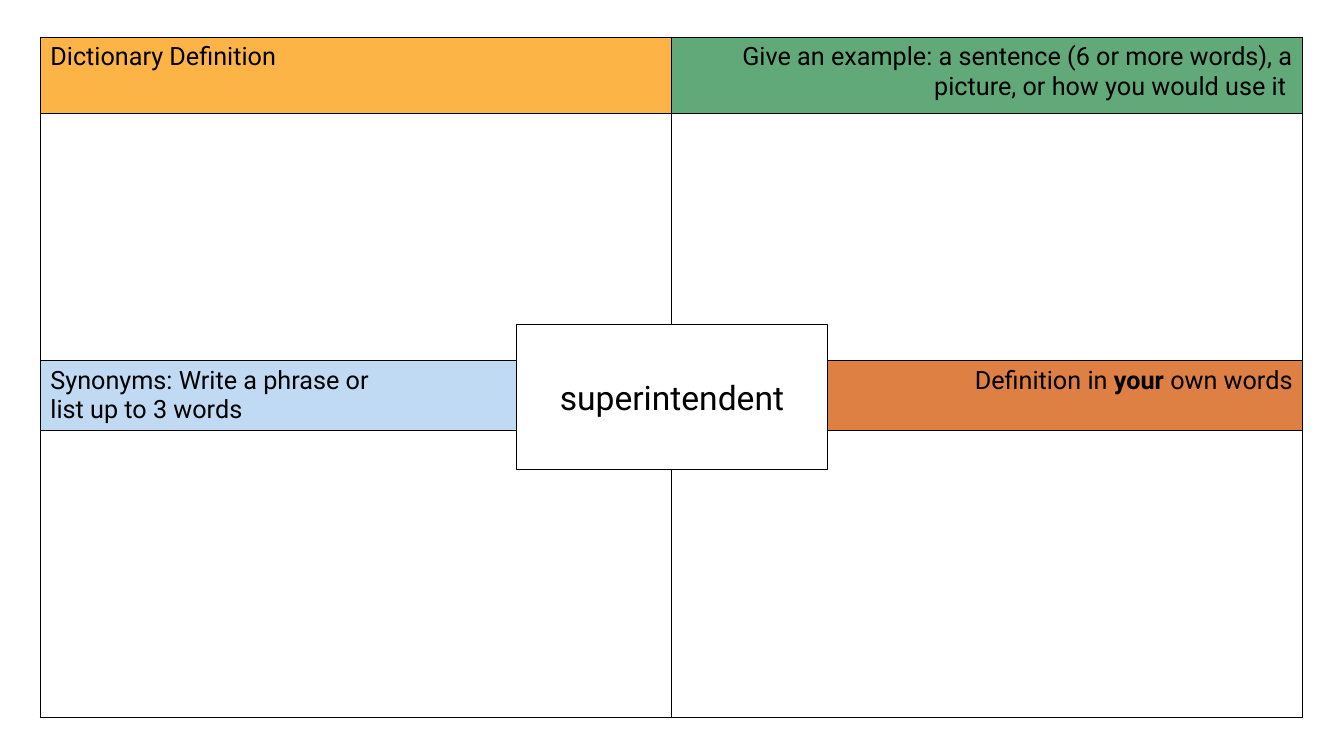
from dataclasses import dataclass

import pptx
import pptx.dml.color
import pptx.enum.text
import pptx.oxml
import pptx.oxml.ns
import pptx.table
import pptx.text.text
import pptx.util
from pptx.dml.color import RGBColor
from pptx.enum.text import MSO_ANCHOR, MSO_AUTO_SIZE, PP_ALIGN
from pptx.util import Inches, Pt

BLACK = RGBColor(0x00, 0x00, 0x00)
WHITE = RGBColor(0xFF, 0xFF, 0xFF)
AMBER = RGBColor(0xFC, 0xB4, 0x47)
GREEN = RGBColor(0x62, 0xA9, 0x7A)
SKY = RGBColor(0xBF, 0xDA, 0xF2)
ORANGE = RGBColor(0xDE, 0x80, 0x43)
FONT = "Roboto"
COLUMN_WIDTH = 6.26
ROW_HEIGHTS = (0.76, 2.45, 0.69, 2.85)


@dataclass
class Heading:
    row: int
    col: int
    fill: RGBColor
    lines: list[list[str]]  # paragraphs of runs; every second run is bold


HEADINGS = [
    Heading(0, 0, AMBER, [["Dictionary Definition"]]),
    Heading(0, 1, GREEN, [["Give an example: a sentence (6 or more words), a "
                           "picture, or how you would use it "]]),
    Heading(2, 0, SKY, [["Synonyms: Write a phrase or "],
                        ["list up to 3 words "]]),
    Heading(2, 1, ORANGE, [["Definition in ", "your ", "own words"]]),
]


def set_font(p: pptx.text.text._Paragraph, size: int) -> None:
    p.font.name = FONT
    p.font.size = Pt(size)
    p.font.color.rgb = BLACK


def format_cell(cell: pptx.table._Cell) -> None:
    """Give a cell a white fill and thin black borders."""
    tc_pr = cell._tc.get_or_add_tcPr()
    for side in ("lnL", "lnR", "lnT", "lnB"):
        tc_pr.append(pptx.oxml.parse_xml(
            f'<a:{side} {pptx.oxml.ns.nsdecls("a")} w="{Pt(1)}">'
            f'<a:solidFill><a:srgbClr val="{BLACK}"/></a:solidFill></a:{side}>'))
    cell.fill.solid()
    cell.fill.fore_color.rgb = WHITE


def write_heading(cell: pptx.table._Cell, heading: Heading) -> None:
    cell.fill.fore_color.rgb = heading.fill
    tf = cell.text_frame
    for i, runs in enumerate(heading.lines):
        p = tf.add_paragraph() if i else tf.paragraphs[0]
        p.alignment = PP_ALIGN.RIGHT if heading.col else PP_ALIGN.LEFT
        set_font(p, 18)
        for j, text in enumerate(runs):
            r = p.add_run()
            r.text = text
            # Runs carry the font too, as cells do not inherit it everywhere
            r.font.name, r.font.size = FONT, Pt(18)
            r.font.color.rgb = BLACK
            r.font.bold = j % 2 == 1


def main() -> None:
    prs = pptx.Presentation()
    prs.slide_width, prs.slide_height = Inches(13.33), Inches(7.5)
    s = prs.slides.add_slide(prs.slide_layouts[5])

    # Four-square grid
    frame = s.shapes.add_table(
        len(ROW_HEIGHTS), 2, Inches(0.4), Inches(0.37),
        Inches(2 * COLUMN_WIDTH), Inches(sum(ROW_HEIGHTS)))
    table = frame.table
    for column in table.columns:
        column.width = Inches(COLUMN_WIDTH)
    for row, height in zip(table.rows, ROW_HEIGHTS):
        row.height = Inches(height)
    for cell in table.iter_cells():
        format_cell(cell)
    for heading in HEADINGS:
        write_heading(table.cell(heading.row, heading.col), heading)

    # Vocabulary word, in front of the grid
    title = s.shapes.title
    title.element.addprevious(frame.element)
    title.left, title.top = Inches(5.12), Inches(3.22)
    title.width, title.height = Inches(3.09), Inches(1.44)
    title.fill.solid()
    title.fill.fore_color.rgb = WHITE
    title.line.color.rgb = BLACK
    title.line.width = Pt(1)
    tf = title.text_frame
    tf.text = "superintendent"
    tf.word_wrap = True
    tf.auto_size = MSO_AUTO_SIZE.NONE
    tf.vertical_anchor = MSO_ANCHOR.MIDDLE
    p = tf.paragraphs[0]
    p.alignment = PP_ALIGN.CENTER
    set_font(p, 24)

    prs.save("out.pptx")


if __name__ == "__main__":
    main()
